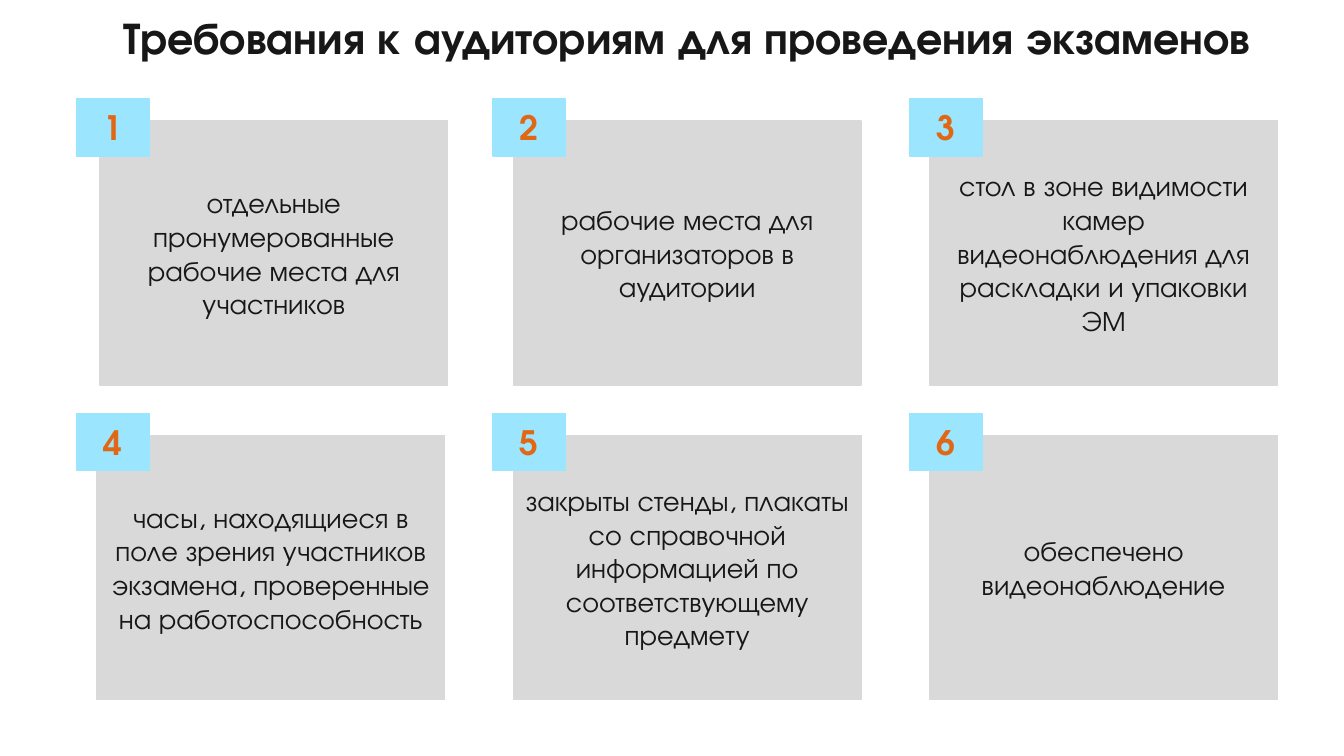
from dataclasses import dataclass

from pptx import Presentation
from pptx.dml.color import RGBColor
from pptx.enum.shapes import MSO_SHAPE
from pptx.enum.text import MSO_ANCHOR, MSO_AUTO_SIZE, PP_ALIGN
from pptx.shapes.group import GroupShape
from pptx.slide import Slide
from pptx.text.text import TextFrame
from pptx.util import Emu, Pt

EMU_PER_PX = 9144
FONT = "TeX Gyre Adventor"
INK, ORANGE, GREY, CYAN = "181717", "E26714", "D9D9D9", "9BE5FF"

COLUMNS = 3
LEFT, TOP = 76, 98
COLUMN_PITCH, ROW_PITCH = 413, 312
CARD_WIDTH, CARD_HEIGHT = 345, 262
BADGE_WIDTH, BADGE_HEIGHT = 72, 57
CARD_DROP = 22


@dataclass(frozen=True)
class Requirement:
    text: str
    card_shift: int = 20


REQUIREMENTS = [
    Requirement("отдельные пронумерованные рабочие места для участников", card_shift=23),
    Requirement("рабочие места для организаторов в аудитории"),
    Requirement("стол в зоне видимости камер видеонаблюдения для раскладки и упаковки ЭМ"),
    Requirement("часы, находящиеся в поле зрения участников экзамена, "
                "проверенные на работоспособность"),
    Requirement("закрыты стенды, плакаты со справочной информацией "
                "по соответствующему предмету"),
    Requirement("обеспечено видеонаблюдение"),
]


def px(length: int) -> Emu:
    return Emu(length * EMU_PER_PX)


def color(value: str) -> RGBColor:
    return RGBColor.from_string(value)


def write(frame: TextFrame, text: str, size: int, ink: str, bold: bool) -> None:
    frame.text = text
    frame.word_wrap = True
    paragraph = frame.paragraphs[0]
    paragraph.alignment = PP_ALIGN.CENTER
    font = paragraph.font
    font.name, font.size, font.bold = FONT, Pt(size), bold
    font.color.rgb = color(ink)


def add_box(group: GroupShape, left: int, top: int, width: int, height: int,
            fill: str, text: str, size: int, ink: str, bold: bool) -> None:
    box = group.shapes.add_shape(MSO_SHAPE.RECTANGLE, px(left), px(top), px(width), px(height))
    box.shadow.inherit = False
    box.fill.solid()
    box.fill.fore_color.rgb = color(fill)
    box.line.color.rgb = color(fill)
    box.line.width = Pt(1)
    box.text_frame.vertical_anchor = MSO_ANCHOR.MIDDLE
    write(box.text_frame, text, size, ink, bold)


def add_requirement(slide: Slide, index: int, requirement: Requirement) -> None:
    row, column = divmod(index, COLUMNS)
    left, top = LEFT + column * COLUMN_PITCH, TOP + row * ROW_PITCH
    group = slide.shapes.add_group_shape()
    add_box(group, left + requirement.card_shift, top + CARD_DROP, CARD_WIDTH, CARD_HEIGHT,
            GREY, requirement.text, 20, INK, False)
    add_box(group, left, top, BADGE_WIDTH, BADGE_HEIGHT,
            CYAN, str(index + 1), 24, ORANGE, True)


def add_title(slide: Slide) -> None:
    title = slide.shapes.title
    title.left, title.top, title.width, title.height = px(53), px(5), px(1257), px(64)
    write(title.text_frame, "Требования к аудиториям для проведения экзаменов", 32, INK, True)
    title.text_frame.vertical_anchor = MSO_ANCHOR.TOP
    title.text_frame.auto_size = MSO_AUTO_SIZE.SHAPE_TO_FIT_TEXT


def main() -> None:
    presentation = Presentation()
    presentation.slide_width, presentation.slide_height = px(1333), px(750)
    slide = presentation.slides.add_slide(presentation.slide_layouts.get_by_name("Title Only"))
    add_title(slide)
    for index, requirement in enumerate(REQUIREMENTS):
        add_requirement(slide, index, requirement)
    presentation.save("out.pptx")


if __name__ == "__main__":
    main()
